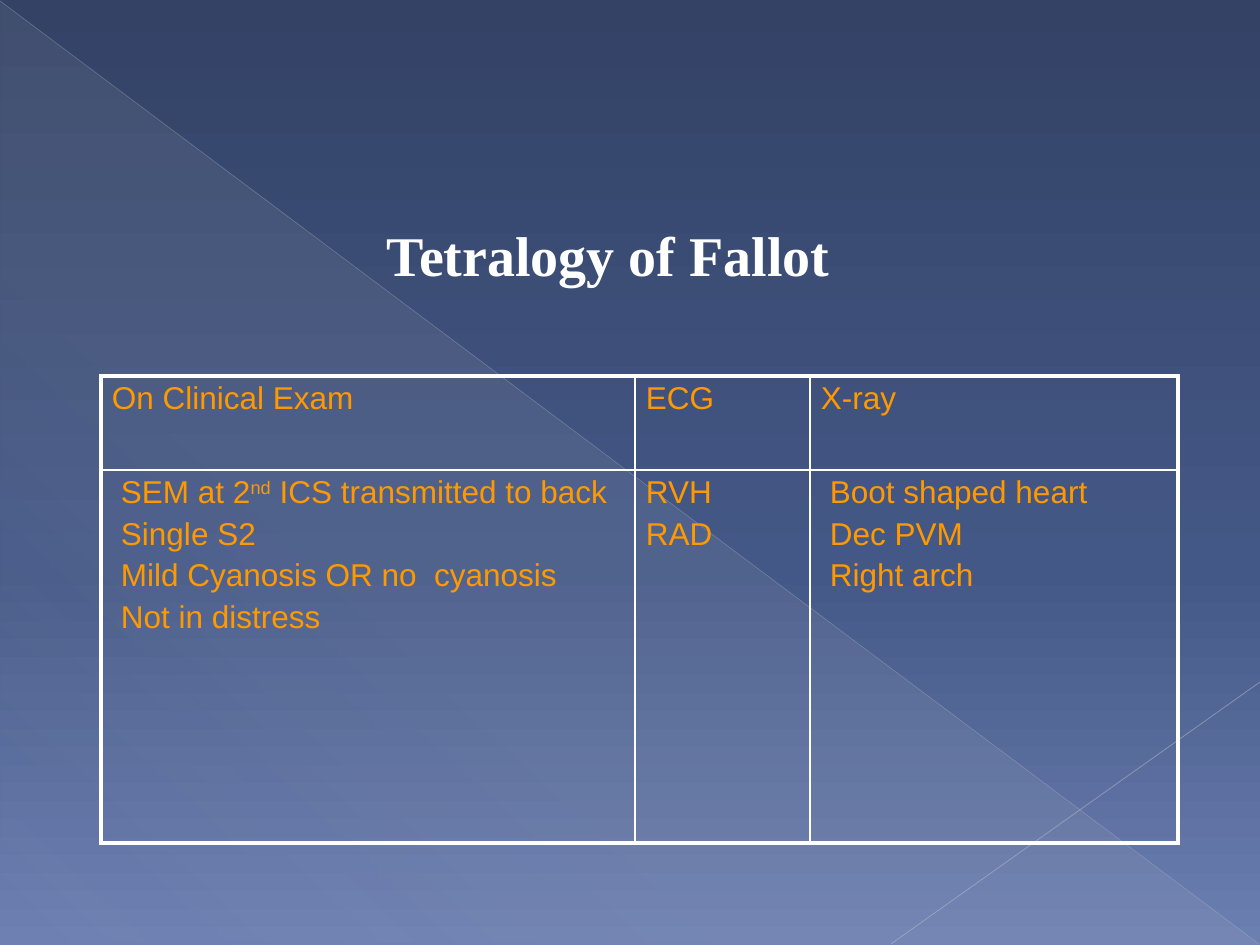
from lxml.etree import SubElement, Element
from pptx import Presentation
from pptx.dml.color import RGBColor
from pptx.enum.shapes import MSO_CONNECTOR, MSO_SHAPE
from pptx.enum.text import PP_ALIGN
from pptx.oxml.ns import qn
from pptx.util import Pt

SCALE = 914400 / 126
SKY = [(0, "334265", 100), (60, "445887", 100), (100, "6C7FB1", 100)]
HAZE = [(0, "D4D4D6", 10), (70, "D4D4D6", 8), (100, "D4D4D6", 1)]
COLS = [534, 175, 368]
ROWS = [94, 373]
HEADS = ["On Clinical Exam", "ECG", "X-ray"]
FINDS = [
    [[("SEM at 2", 0), ("nd", 30), (" ICS transmitted to back", 0)],
     "Single S2", "Mild Cyanosis OR no  cyanosis", "Not in distress"],
    ["RVH", "RAD"],
    ["Boot shaped heart", "Dec PVM", "Right arch"],
]


def px(*nums):
    """Turn px lengths into EMU."""
    return [round(n * SCALE) for n in nums]


def tint(code):
    """Give the colour for a hex string."""
    return RGBColor.from_string(code)


def shade(root, code, alpha=100):
    """Add a solid colour with its opacity in percent to an element."""
    clr = SubElement(root, qn("a:srgbClr"), val=code)
    if alpha < 100:
        SubElement(clr, qn("a:alpha"), val=str(alpha * 1000))


def blend(fill, root, stops, angle):
    """Fill with a gradient of (place, colour, opacity) stops."""
    fill.gradient()
    fill.gradient_angle = 360 - angle
    group = next(root.iter(qn("a:gsLst")))
    for old in list(group):
        group.remove(old)
    for place, code, alpha in stops:
        stop = SubElement(group, qn("a:gs"), pos=str(place * 1000))
        shade(stop, code, alpha)


def add_haze(slide):
    """Draw the pale triangle over the lower left half."""
    shape = slide.shapes.add_shape(MSO_SHAPE.RIGHT_TRIANGLE, *px(1, 2, 1258, 942))
    shape.shadow.inherit = False
    shape.line.fill.background()
    blend(shape.fill, shape._element, HAZE, 133)


def add_ray(slide, ends, code, width, alpha):
    """Draw a thin see-through line."""
    ray = slide.shapes.add_connector(MSO_CONNECTOR.STRAIGHT, *px(*ends))
    ray.line.width = Pt(width)
    ray.line.color.rgb = tint(code)
    clr = next(ray.line._ln.iter(qn("a:srgbClr")))
    SubElement(clr, qn("a:alpha"), val=str(alpha * 1000))
    SubElement(ray._element.spPr, qn("a:effectLst"))


def add_run(para, text, font, size, code, base=0):
    """Add one run of text, raised by base percent."""
    run = para.add_run()
    run.text = text
    run.font.name = font
    run.font.size = Pt(size)
    run.font.color.rgb = tint(code)
    if base:
        run._r.get_or_add_rPr().set("baseline", str(base * 1000))
    return run


def add_title(slide, text):
    """Write the centred heading."""
    frame = slide.shapes.add_textbox(*px(66, 208, 1085, 81)).text_frame
    frame.word_wrap = True
    frame.margin_top = px(12)[0]
    para = frame.paragraphs[0]
    para.alignment = PP_ALIGN.CENTER
    add_run(para, text, "Times New Roman", 32, "FFFFFF").font.bold = True


def edge(cell, sides):
    """Rule the cell's sides in white at the given widths."""
    props = cell._tc.get_or_add_tcPr()
    for i, (side, width) in enumerate(zip("LRTB", sides)):
        line = Element(qn(f"a:ln{side}"), w=str(Pt(width)))
        shade(SubElement(line, qn("a:solidFill")), "FFFFFF")
        props.insert(i, line)


def fill_cell(cell, lines, left):
    """Write the lines of a cell, each a string or a list of runs."""
    cell.fill.background()
    cell.margin_left, cell.margin_right = px(left, 11)
    cell.margin_top = cell.margin_bottom = px(5)[0]
    frame = cell.text_frame
    for i, line in enumerate(lines):
        para = frame.add_paragraph() if i else frame.paragraphs[0]
        para.space_before = Pt(3.6 if i else 0)
        for text, base in [(line, 0)] if isinstance(line, str) else line:
            add_run(para, text, "Arial", 18, "FF9900", base)


def add_grid(slide):
    """Build the table of findings with a thick outer frame."""
    spot = px(101, 376, sum(COLS), sum(ROWS))
    table = slide.shapes.add_table(len(ROWS), len(COLS), *spot).table
    table.first_row = table.horz_banding = False
    for col, width in zip(table.columns, px(*COLS)):
        col.width = width
    for row, height in zip(table.rows, px(*ROWS)):
        row.height = height
    for r, texts in enumerate([[[head] for head in HEADS], FINDS]):
        for c, lines in enumerate(texts):
            cell = table.cell(r, c)
            fill_cell(cell, lines, 20 if r and c != 1 else 11)
            outer = [c == 0, c == len(COLS) - 1, r == 0, r == len(ROWS) - 1]
            edge(cell, [2.25 if out else 1 for out in outer])


def main():
    """Build the slide and save it."""
    deck = Presentation()
    deck.slide_width, deck.slide_height = px(1260, 945)
    slide = deck.slides.add_slide(deck.slide_layouts[6])
    blend(slide.background.fill, slide._element, SKY, 90)
    add_haze(slide)
    add_ray(slide, (0, 1, 1259, 944), "B9BDC8", 0.39, 35)
    add_ray(slide, (1260, 682, 891, 944), "C1C4CE", 0.47, 45)
    add_grid(slide)
    add_title(slide, "Tetralogy of Fallot")
    deck.save("out.pptx")


if __name__ == "__main__":
    main()
